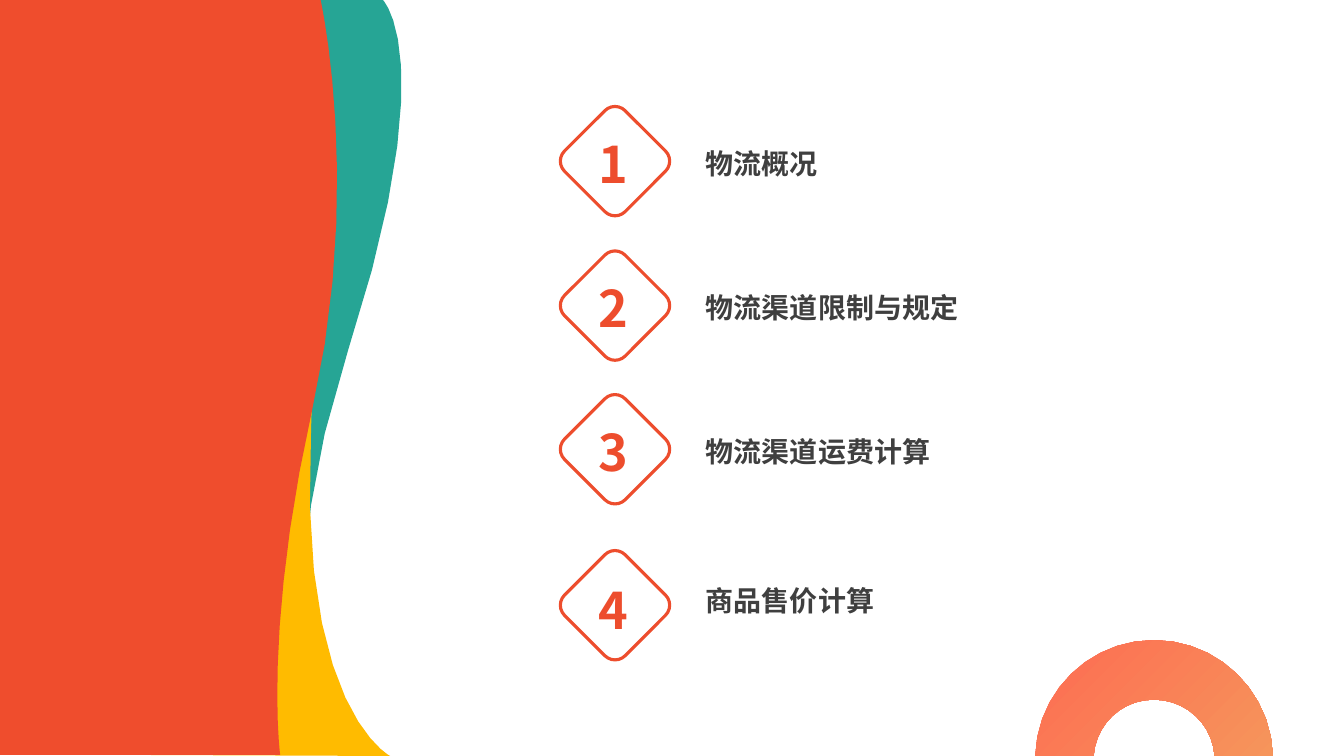
from dataclasses import dataclass
from typing import NamedTuple

from pptx import Presentation
from pptx.dml.color import RGBColor
from pptx.enum.shapes import MSO_SHAPE
from pptx.enum.text import MSO_AUTO_SIZE
from pptx.util import Cm, Pt


@dataclass(frozen=True)
class Theme:
    font: str = "Noto Sans CJK SC"
    red: str = "EF4D2D"
    teal: str = "26A595"
    yellow: str = "FFBB00"
    accent: str = "ED4D2D"
    ink: str = "3F3F3F"
    ring: tuple[str, str] = ("FD6B52", "F6955B")
    number_size: int = 36
    label_size: int = 20
    outline: float = 2.25


class Topic(NamedTuple):
    label: str
    diamond_top: float
    number_top: float
    label_top: float


class Outline(NamedTuple):
    colors: tuple[str, ...]
    start: tuple[float, float]
    segments: list[tuple[float, ...]]


THEME = Theme()
WIDTH, HEIGHT = 33.87, 19.05
STEPS = 10

TOPICS = [
    Topic("物流概况", 2.98, 3.1, 3.56),
    Topic("物流渠道限制与规定", 6.62, 6.74, 7.2),
    Topic("物流渠道运费计算", 10.24, 10.36, 10.82),
    Topic("商品售价计算", 14.17, 14.35, 14.58),
]

RING = Outline(THEME.ring, (29.08, 17.63), [
    (29.9, 17.63, 30.56, 18.26, 30.61, HEIGHT),
    (32.08, HEIGHT),
    (32.03, 17.42, 30.7, 16.13, 29.08, 16.13),
    (27.46, 16.13, 26.14, 17.42, 26.09, HEIGHT),
    (27.56, HEIGHT),
    (27.62, 18.26, 28.26, 17.63, 29.08, 17.63),
])
WAVES = [
    Outline((THEME.teal,), (1.57, 0), [
        (9.65, 0),
        (9.65, 0, 11.16, 1.47, 8.77, 8.84),
        (6.38, 16.23, 8.64, 19.02, 8.64, 19.02),
        (1.57, 19.02),
    ]),
    Outline((THEME.yellow,), (9.83, HEIGHT), [
        (9.83, HEIGHT, 7.49, 17.86, 7.84, 10.82),
        (8.18, 3.78, 7.21, 0, 7.21, 0),
        (2.36, 0),
        (2.36, 19.02),
    ]),
    Outline((THEME.red,), (0, 0), [
        (8.08, 0),
        (8.08, 0, 9.14, 4.75, 7.87, 10.31),
        (6.63, 15.85, 7.06, 19.02, 7.06, 19.02),
        (0, 19.02),
    ]),
]


def rgb(color: str) -> RGBColor:
    return RGBColor.from_string(color)


def bezier(*points: tuple[float, float]) -> list[tuple[int, int]]:
    curve = []
    for step in range(1, STEPS + 1):
        t = step / STEPS
        weights = ((1 - t) ** 3, 3 * t * (1 - t) ** 2, 3 * t**2 * (1 - t), t**3)
        x, y = (sum(w * v for w, v in zip(weights, axis)) for axis in zip(*points))
        curve.append((Cm(x), Cm(y)))
    return curve


def add_outline(s, outline: Outline) -> None:
    pen = outline.start
    builder = s.shapes.build_freeform(Cm(pen[0]), Cm(pen[1]))
    vertices = []
    for segment in outline.segments:
        points = list(zip(segment[::2], segment[1::2]))
        if len(points) == 1:
            vertices.append((Cm(segment[0]), Cm(segment[1])))
        else:
            vertices += bezier(pen, *points)
        pen = points[-1]
    builder.add_line_segments(vertices, close=True)
    sp = builder.convert_to_shape()
    sp.shadow.inherit = False
    sp.line.fill.background()
    if len(outline.colors) == 1:
        sp.fill.solid()
        sp.fill.fore_color.rgb = rgb(outline.colors[0])
    else:
        sp.fill.gradient()
        sp.fill.gradient_angle = 315
        for stop, color in zip(sp.fill.gradient_stops, outline.colors):
            stop.color.rgb = rgb(color)


def add_text(s, text: str, *, left: float, top: float, width: float, height: float,
             size: int, color: str, inset: float, grow: bool = False) -> None:
    tf = s.shapes.add_textbox(Cm(left), Cm(top), Cm(width), Cm(height)).text_frame
    tf.word_wrap = True
    tf.auto_size = MSO_AUTO_SIZE.SHAPE_TO_FIT_TEXT if grow else MSO_AUTO_SIZE.NONE
    tf.margin_left = tf.margin_right = Cm(0.25)
    tf.margin_top = tf.margin_bottom = Cm(inset)
    r = tf.paragraphs[0].add_run()
    r.text = text
    r.font.name = THEME.font
    r.font.size = Pt(size)
    r.font.bold = True
    r.font.color.rgb = rgb(color)


def add_diamond(s, top: float) -> None:
    sp = s.shapes.add_shape(MSO_SHAPE.ROUNDED_RECTANGLE,
                            Cm(14.42), Cm(top), Cm(2.16), Cm(2.16))
    sp.rotation = 315
    sp.shadow.inherit = False
    sp.fill.background()
    sp.line.color.rgb = rgb(THEME.accent)
    sp.line.width = Pt(THEME.outline)


def add_topic(s, number: int, topic: Topic) -> None:
    add_diamond(s, topic.diamond_top)
    add_text(s, str(number), left=14.83, top=topic.number_top, width=1.17, height=1.93,
             size=THEME.number_size, color=THEME.accent, inset=0.25)
    add_text(s, topic.label, left=17.54, top=topic.label_top, width=9.14, height=1.09,
             size=THEME.label_size, color=THEME.ink, inset=0.13, grow=True)


def main() -> None:
    prs = Presentation()
    prs.slide_width, prs.slide_height = Cm(WIDTH), Cm(HEIGHT)
    s = prs.slides.add_slide(prs.slide_layouts[6])
    add_outline(s, RING)
    for number, topic in enumerate(TOPICS, 1):
        add_topic(s, number, topic)
    for wave in WAVES:
        add_outline(s, wave)
    prs.save("out.pptx")


if __name__ == "__main__":
    main()
